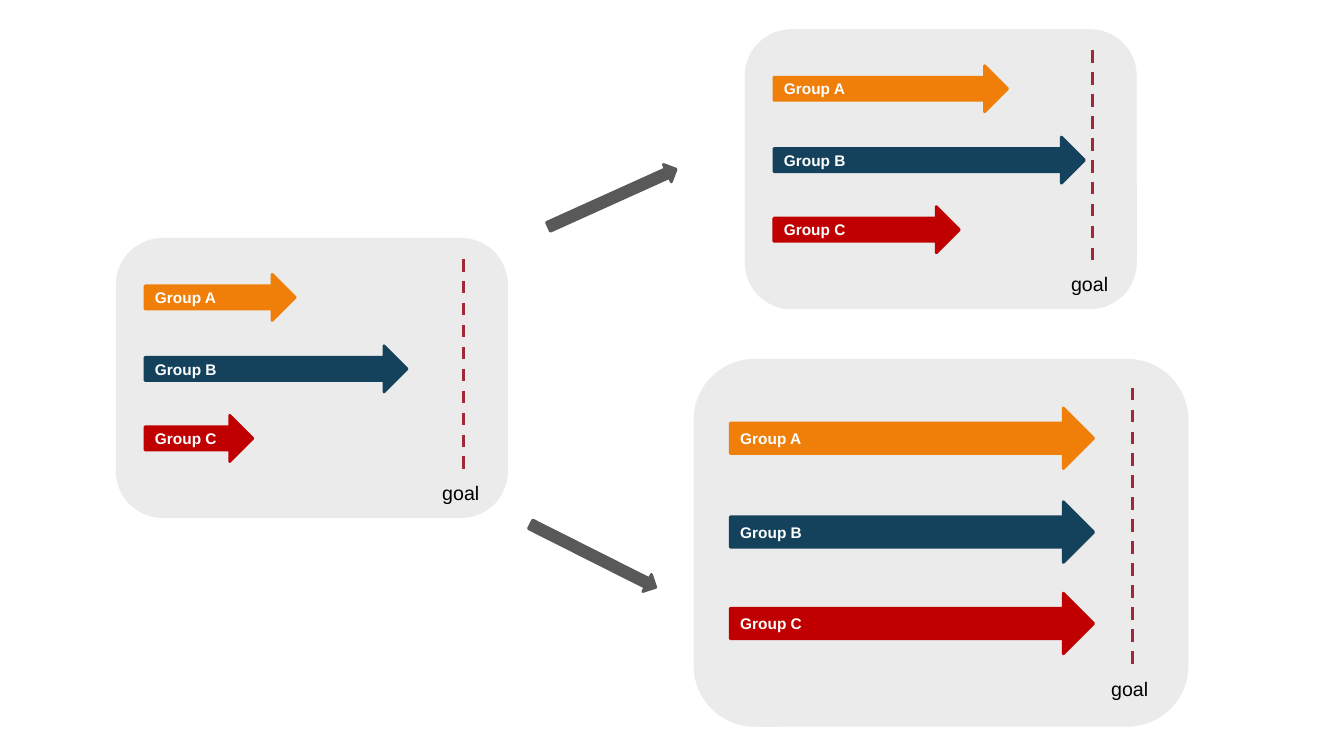
from lxml import etree
from pptx import Presentation
from pptx.dml.color import RGBColor
from pptx.enum.dml import MSO_LINE
from pptx.enum.shapes import MSO_CONNECTOR, MSO_SHAPE
from pptx.enum.text import MSO_ANCHOR, PP_ALIGN
from pptx.oxml.ns import qn
from pptx.util import Pt

ROUNDED = MSO_SHAPE.ROUNDED_RECTANGLE
ARROW = MSO_SHAPE.RIGHT_ARROW
STRAIGHT = MSO_CONNECTOR.STRAIGHT
DASH = MSO_LINE.DASH
LEFT = PP_ALIGN.LEFT
MIDDLE = MSO_ANCHOR.MIDDLE
TOP = MSO_ANCHOR.TOP

PANEL_GRAY = RGBColor(0xEB, 0xEB, 0xEB)
ORANGE = RGBColor(0xF0, 0x7F, 0x09)
NAVY = RGBColor(0x14, 0x42, 0x5D)
RED = RGBColor(0xC0, 0x00, 0x00)
GOAL_RED = RGBColor(0x9F, 0x29, 0x36)
STEP_GRAY = RGBColor(0x59, 0x59, 0x59)
WHITE = RGBColor(0xFF, 0xFF, 0xFF)
BLACK = RGBColor(0x00, 0x00, 0x00)

FONT = "Arial"
BASE_WIDTH, BASE_HEIGHT = 280, 200
GROUPS = [("Group A", ORANGE, 26), ("Group B", NAVY, 77), ("Group C", RED, 126.7)]


def write(shape, text, size=14, color=BLACK, bold=False, anchor=TOP):
    frame = shape.text_frame
    frame.word_wrap = True
    frame.vertical_anchor = anchor
    paragraph = frame.paragraphs[0]
    paragraph.alignment = LEFT
    run = paragraph.add_run()
    run.text = text
    run.font.name = FONT
    run.font.size = Pt(size)
    run.font.bold = bold
    run.font.color.rgb = color


class Diagram:
    def __init__(self, slide):
        self.shapes = slide.shapes

    def box(self, shapes, kind, left, top, width, height, color):
        box = shapes.add_shape(kind, Pt(left), Pt(top), Pt(width), Pt(height))
        box.shadow.inherit = False
        box.fill.solid()
        box.fill.fore_color.rgb = color
        box.line.fill.background()
        return box

    def arrow(self, shapes, left, top, width, height, color, rotation=0):
        arrow = self.box(shapes, ARROW, left, top, width, height, color)
        arrow.line.color.rgb = color
        arrow.line.width = Pt(2)
        arrow.rotation = rotation
        return arrow

    def goal(self, shapes, x, top, bottom, width, height):
        marker = shapes.add_connector(STRAIGHT, Pt(x), Pt(top), Pt(x), Pt(bottom))
        marker.line.color.rgb = GOAL_RED
        marker.line.width = Pt(2.25)
        marker.line.dash_style = DASH
        etree.SubElement(marker._element.spPr, qn("a:effectLst"))
        label = shapes.add_textbox(Pt(x - 22.5), Pt(bottom + 3), Pt(width), Pt(height))
        write(label, "goal")

    def panel(self, left, top, width, height, lengths, drop=0):
        across, down = width / BASE_WIDTH, height / BASE_HEIGHT
        inner_top = top + drop
        shapes = self.shapes.add_group_shape().shapes
        self.box(shapes, ROUNDED, left, top, width, height, PANEL_GRAY)
        for (name, color, offset), length in zip(GROUPS, lengths):
            progress = self.arrow(shapes, left + 20.8 * across, inner_top + offset * down,
                                  length, 33 * down, color)
            write(progress, name, size=11, color=WHITE, bold=True, anchor=MIDDLE)
        self.goal(shapes, left + 248.5 * across, inner_top + 15 * down,
                  inner_top + 167 * down, 45 * across, 24.5 * down)


def main():
    deck = Presentation()
    deck.slide_width, deck.slide_height = Pt(960), Pt(540)
    diagram = Diagram(deck.slides.add_slide(deck.slide_layouts[6]))

    diagram.panel(82.8, 170, 280, 200, [107.3, 187.2, 77])
    diagram.panel(532, 20.9, 280, 200, [167, 221.8, 132.5])
    diagram.panel(495.4, 256.3, 353.5, 262.8, [259.6] * 3, drop=0.9)

    for left, top, rotation in [(387.4, 134.6, 335.7), (373.7, 390.2, 26.7)]:
        diagram.arrow(diagram.shapes, left, top, 100, 13.7, STEP_GRAY, rotation)

    deck.save("out.pptx")


if __name__ == "__main__":
    main()
